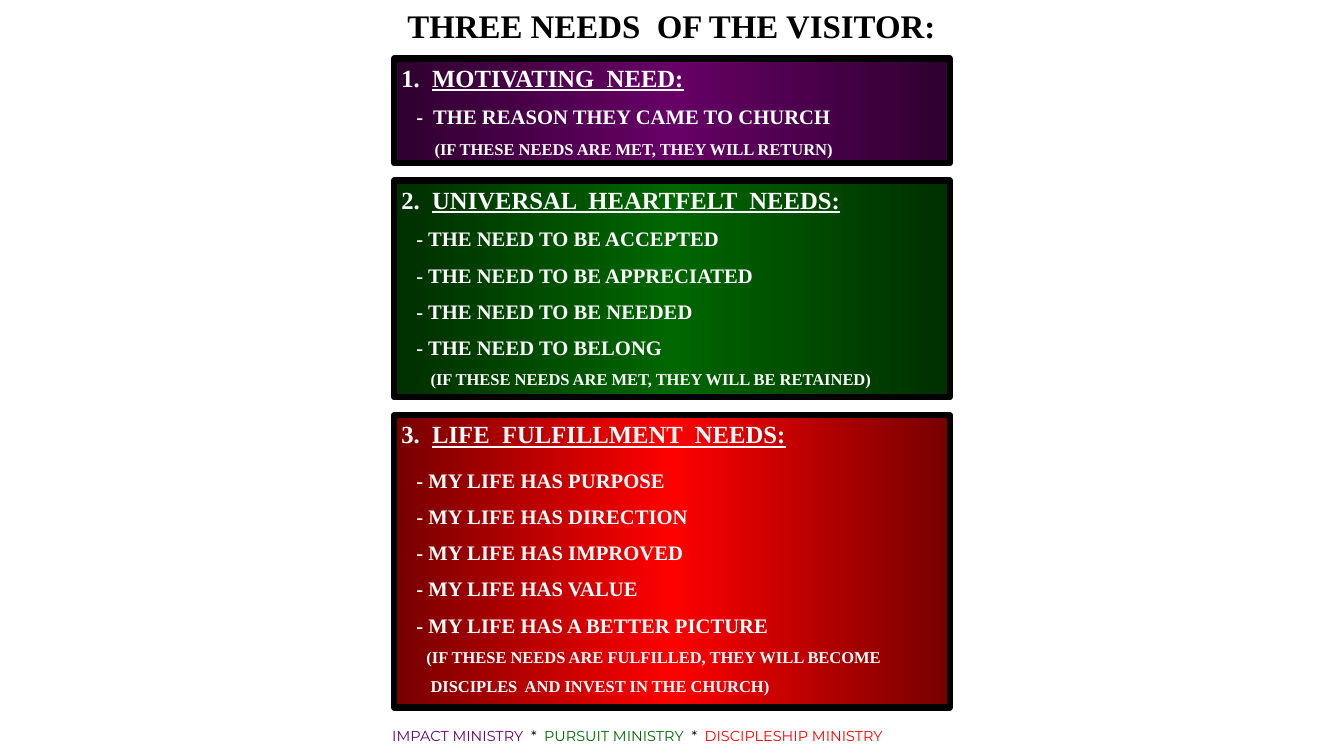
from dataclasses import dataclass
from copy import deepcopy

from lxml import etree
from pptx import Presentation
from pptx.dml.color import RGBColor
from pptx.enum.text import MSO_ANCHOR, MSO_AUTO_SIZE, PP_ALIGN
from pptx.oxml.ns import qn
from pptx.util import Inches, Pt

TOP = MSO_ANCHOR.TOP
LEFT = PP_ALIGN.LEFT
NO_FIT = MSO_AUTO_SIZE.NONE
COMPARISON_LAYOUT = 4


@dataclass(frozen=True)
class Theme:
    serif: str = "Times New Roman"
    sans: str = "Montserrat"
    black: str = "000000"
    white: str = "FFFFFF"
    purple: tuple = ("2F002F", "660066")
    green: tuple = ("002F00", "006600")
    red: tuple = ("760000", "FF0000")
    title_size: float = 23.5
    heading_size: float = 17.6
    item_size: float = 14.7
    note_size: float = 11.8
    footer_size: float = 10.3
    border: float = 4.5


class SlideBuilder:
    def __init__(self, slide, theme):
        self.slide = slide
        self.theme = theme

    def frame(self, index, left, top, width, height):
        """Move a placeholder and clear its inherited text layout."""
        box = self.slide.placeholders[index]
        place = {"left": left, "top": top, "width": width, "height": height}
        for name, value in place.items():
            setattr(box, name, Inches(value))
        layout = {
            "word_wrap": True, "auto_size": NO_FIT, "vertical_anchor": TOP,
            "margin_left": Inches(0.07), "margin_right": Inches(0.07),
            "margin_top": Inches(0.04), "margin_bottom": Inches(0.04),
        }
        for name, value in layout.items():
            setattr(box.text_frame, name, value)
        return box

    def paragraph(self, box, indent=0, before=0):
        frame = box.text_frame
        para = frame.paragraphs[0]
        if para.runs:
            para = frame.add_paragraph()
        para.alignment = LEFT
        para.space_before = Pt(before)
        properties = para._p.get_or_add_pPr()
        properties.set("marL", str(Inches(indent)))
        properties.set("indent", "0")
        etree.SubElement(properties, qn("a:buNone"))
        return para

    def span(self, para, text, color, **style):
        span = para.add_run()
        span.text = text
        for name, value in style.items():
            setattr(span.font, name, value)
        span.font.color.rgb = RGBColor.from_string(color)

    def title(self, text, *place):
        theme = self.theme
        para = self.paragraph(self.frame(0, *place))
        self.span(para, text, theme.black, name=theme.serif,
                  size=Pt(theme.title_size), bold=True)

    def gradient(self, box, edge, middle):
        fill = box.fill
        fill.gradient()
        fill.gradient_angle = 0
        stop_list = box._element.spPr.find(qn("a:gradFill")).find(qn("a:gsLst"))
        stop_list.append(deepcopy(stop_list[0]))
        for stop, position, color in zip(fill.gradient_stops, (0, 0.5, 1),
                                         (edge, middle, edge)):
            stop.position = position
            stop.color.rgb = RGBColor.from_string(color)

    def need(self, index, top, height, colors, heading, items, notes, first_gap):
        """One bordered panel: numbered heading, items and closing notes."""
        theme = self.theme
        box = self.frame(index, 3.91, top, 5.51, height)
        self.gradient(box, *colors)
        box.line.color.rgb = RGBColor.from_string(theme.black)
        box.line.width = Pt(theme.border)

        style = {"name": theme.serif, "bold": True}
        para = self.paragraph(box)
        size = Pt(theme.heading_size)
        self.span(para, f"{index}.  ", theme.white, size=size, **style)
        self.span(para, heading, theme.white, size=size, underline=True, **style)
        for number, item in enumerate(items):
            para = self.paragraph(box, 0.15, 8.2 if number else first_gap)
            self.span(para, item, theme.white, size=Pt(theme.item_size), **style)
        for note, indent in notes:
            para = self.paragraph(box, indent, 6.8)
            self.span(para, note, theme.white, size=Pt(theme.note_size), **style)

    def footer(self, index, parts, *place):
        theme = self.theme
        para = self.paragraph(self.frame(index, *place))
        for text, color in parts:
            self.span(para, text, color, name=theme.sans,
                      size=Pt(theme.footer_size), bold=False)


def main():
    deck = Presentation()
    deck.slide_width, deck.slide_height = Inches(13.33), Inches(7.5)
    theme = Theme()
    page = SlideBuilder(
        deck.slides.add_slide(deck.slide_layouts[COMPARISON_LAYOUT]), theme)

    page.title("THREE NEEDS  OF THE VISITOR:", 3.97, 0.02, 5.43, 0.47)

    # Three needs
    page.need(1, 0.58, 1.04, theme.purple, "MOTIVATING  NEED:",
              ["-  THE REASON THEY CAME TO CHURCH"],
              [("(IF THESE NEEDS ARE MET, THEY WILL RETURN)", 0.33)], 8.8)
    page.need(2, 1.79, 2.15, theme.green, "UNIVERSAL  HEARTFELT  NEEDS:",
              [f"- THE NEED TO {verb}" for verb in
               ("BE ACCEPTED", "BE APPRECIATED", "BE NEEDED", "BELONG")],
              [("(IF THESE NEEDS ARE MET, THEY WILL BE RETAINED)", 0.29)], 8.8)
    page.need(3, 4.12, 2.9, theme.red, "LIFE  FULFILLMENT  NEEDS:",
              [f"- MY LIFE HAS {gain}" for gain in
               ("PURPOSE", "DIRECTION", "IMPROVED", "VALUE", "A BETTER PICTURE")],
              [("(IF THESE NEEDS ARE FULFILLED, THEY WILL BECOME", 0.25),
               ("DISCIPLES  AND INVEST IN THE CHURCH)", 0.29)], 13.4)

    # Ministries, coloured like the needs they serve
    star = ("*  ", theme.black)
    page.footer(4, [("IMPACT MINISTRY  ", theme.purple[1]), star,
                    ("PURSUIT MINISTRY  ", theme.green[1]), star,
                    ("DISCIPLESHIP MINISTRY", theme.red[1])],
                3.82, 7.17, 5.76, 0.25)

    deck.save("out.pptx")


if __name__ == "__main__":
    main()
